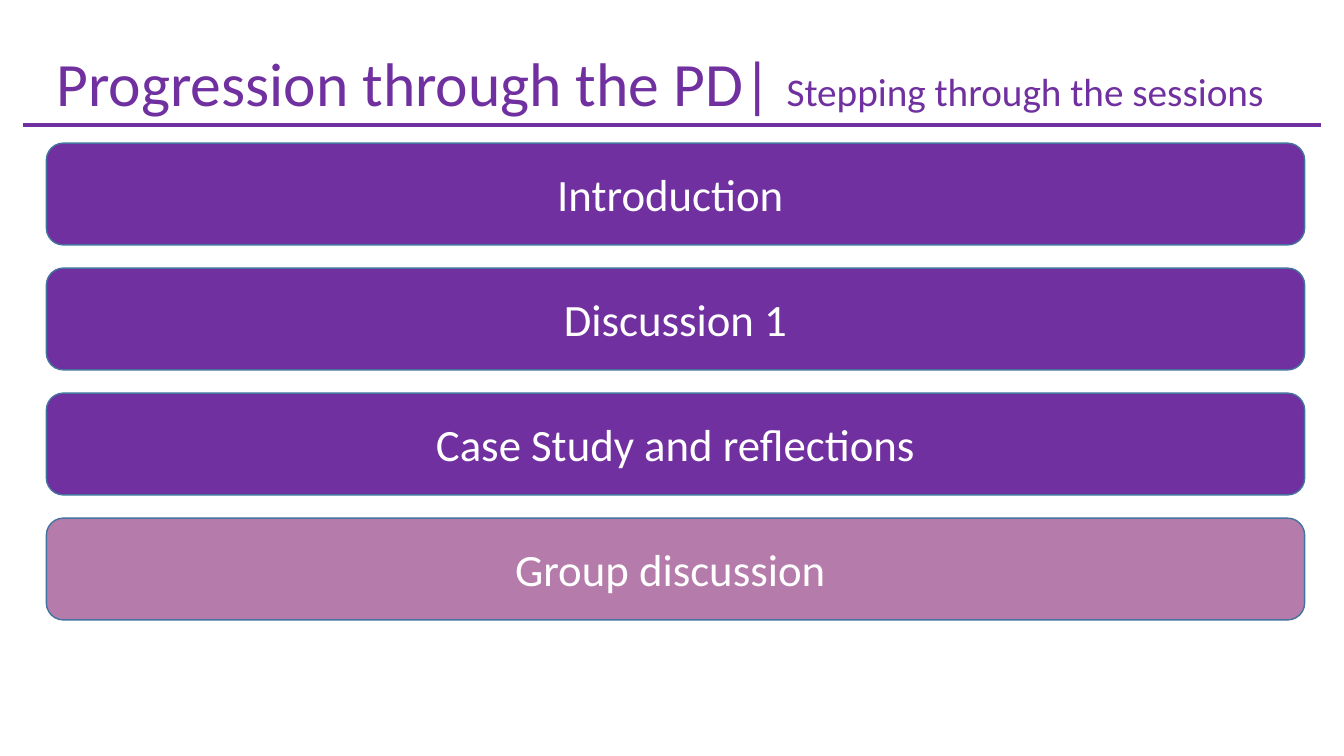
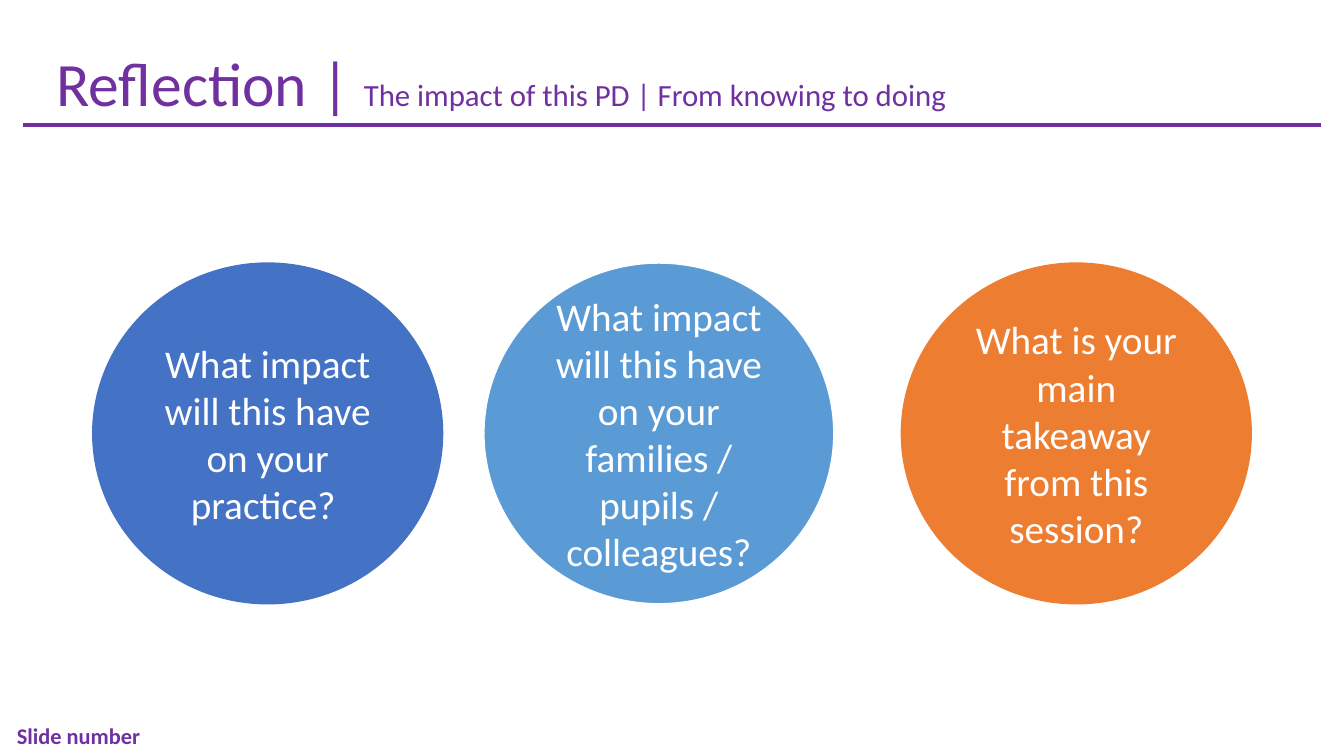
from lxml import etree
from pptx import Presentation
from pptx import util as u
from pptx.dml.color import RGBColor
from pptx.enum import shapes, text
from pptx.oxml.ns import qn

COLOURS = {
    "purple": "7030A0", "mauve": "B57BAA", "edge": "43739E", "white": "FFFFFF",
    "blue": "4472C4", "sky": "5B9BD5", "orange": "ED7D31",
}
FONT = "Calibri"
TITLE_BOX = (0.46, 0.4, 12.41, 0.84)
RULE = (0.23, 13.1, 1.24)  # left, right, height on the page
FOOTER_BOX = (0.07, 7.1, 3, 0.4)
CENTRED = {"alignment": text.PP_ALIGN.CENTER}


def colour(name):
    return RGBColor.from_string(COLOURS[name])


def inches(box):
    return [u.Inches(length) for length in box]


def add_span(para, words, size, ink, **format_values):
    span = para.add_run()
    span.text = words
    values = {"name": FONT, "size": u.Pt(size), **format_values}
    for name, value in values.items():
        setattr(span.font, name, value)
    span.font.color.rgb = colour(ink)


def add_text_box(page, box, **frame_values):
    frame = page.shapes.add_textbox(*inches(box)).text_frame
    for name, value in {"word_wrap": True, **frame_values}.items():
        setattr(frame, name, value)
    return frame.paragraphs[0]


def add_header(page, title, subtitle, subtitle_size):
    # Rule under the title
    left, right, y = RULE
    rule = page.shapes.add_connector(
        shapes.MSO_CONNECTOR.STRAIGHT, *inches((left, y, right, y)))
    rule.line.color.rgb = colour("purple")
    rule.line.width = u.Pt(3)
    etree.SubElement(rule._element.spPr, qn("a:effectLst"))
    # Title and subtitle on one line
    para = add_text_box(page, TITLE_BOX,
                        auto_size=text.MSO_AUTO_SIZE.SHAPE_TO_FIT_TEXT)
    add_span(para, title, 44, "purple")
    add_span(para, subtitle, subtitle_size, "purple")


def add_footer(page, words):
    para = add_text_box(page, FOOTER_BOX,
                        vertical_anchor=text.MSO_ANCHOR.MIDDLE)
    add_span(para, words, 16, "purple", bold=True)


def add_label_shape(page, kind, box, words, size, fill, edge):
    shape = page.shapes.add_shape(kind, *inches(box))
    shape.shadow.inherit = False
    shape.fill.solid()
    shape.fill.fore_color.rgb = colour(fill)
    shape.line.color.rgb = colour(edge)
    shape.line.width = u.Pt(1)
    frame = shape.text_frame
    frame.word_wrap = True
    frame.vertical_anchor = text.MSO_ANCHOR.MIDDLE
    para = frame.paragraphs[0]
    for name, value in CENTRED.items():
        setattr(para, name, value)
    add_span(para, words, size, "white")


def add_session_bars(page, box, sessions, bar_height=1.01):
    """Stack the bars evenly from the top to the bottom of the box."""
    left, top, width, height = box
    pitch = (height - bar_height) / (len(sessions) - 1)
    for row, (words, fill) in enumerate(sessions):
        add_label_shape(page, shapes.MSO_SHAPE.ROUNDED_RECTANGLE,
                        (left, top + row * pitch, width, bar_height),
                        words, 32, fill, "edge")


def add_question_circles(page, box, questions, width=3.47):
    """Place each circle at its offset from the left of the box."""
    left, top, height = box
    for offset, words, fill, edge in questions:
        add_label_shape(page, shapes.MSO_SHAPE.OVAL,
                        (left + offset, top, width, height),
                        words, 28, fill, edge)


def build_progression(page):
    add_header(page, "Progression through the PD| ",
               "Stepping through the sessions", 28)
    add_session_bars(page, (0.46, 1.42, 12.48, 4.73), [
        ("Introduction ", "purple"),
        ("Discussion 1", "purple"),
        ("Case Study and reflections", "purple"),
        ("Group discussion ", "mauve"),
    ])


def build_reflection(page):
    add_footer(page, "Slide number")
    add_header(page, "Reflection | ",
               "The impact of this PD | From knowing to doing", 22)
    add_question_circles(page, (0.92, 2.61, 3.38), [
        (0, "What impact will this have on your practice? ", "blue", "blue"),
        (3.88, "What impact will this have on your families / pupils / "
               "colleagues?", "sky", "white"),
        (8.02, "What is your main takeaway from this session?",
         "orange", "orange"),
    ])


def main():
    deck = Presentation()
    deck.slide_width, deck.slide_height = inches((13.33, 7.5))
    blank = deck.slide_layouts[6]
    for build in (build_progression, build_reflection):
        build(deck.slides.add_slide(blank))
    deck.save("out.pptx")


if __name__ == "__main__":
    main()
